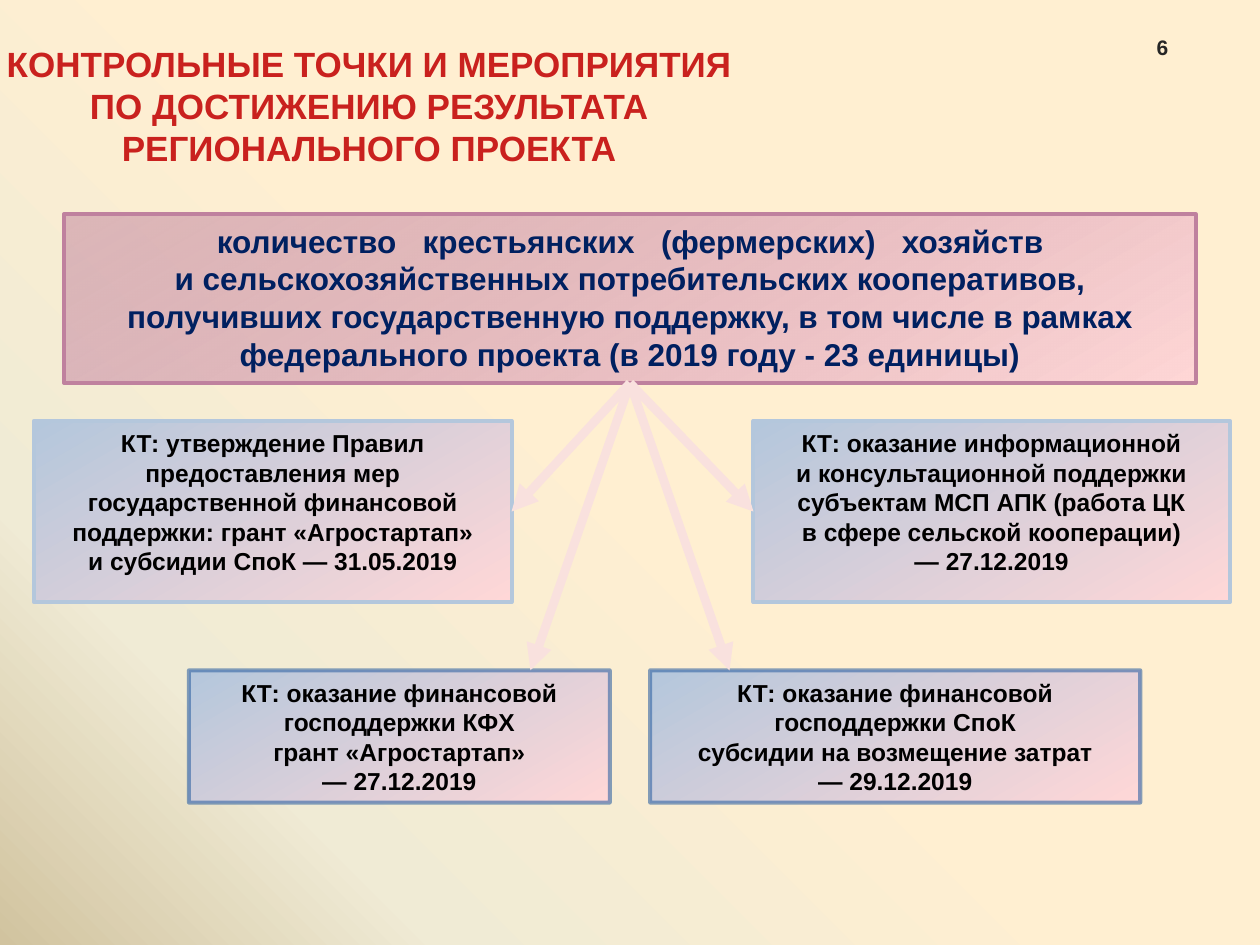
"""Build the slide on checkpoints and activities of the regional project."""
from copy import deepcopy

from lxml import etree
from pptx import Presentation
from pptx.dml.color import RGBColor
from pptx.enum.shapes import MSO_CONNECTOR, MSO_SHAPE
from pptx.enum.text import MSO_ANCHOR, PP_ALIGN
from pptx.oxml.ns import qn
from pptx.util import Inches, Pt

RECTANGLE, STRAIGHT = MSO_SHAPE.RECTANGLE, MSO_CONNECTOR.STRAIGHT
CENTER, TOP, BOTTOM = PP_ALIGN.CENTER, MSO_ANCHOR.TOP, MSO_ANCHOR.BOTTOM
BOTTOM_SIDE, LEFT_SIDE, RIGHT_SIDE = 2, 1, 3

COLORS = {
    "cream": "FFEFD1", "ivory": "F0EBD5", "sand": "D1C39F",
    "red": "C9211E", "navy": "002060", "black": "000000", "gray": "262626",
    "mauve": "BF819E", "rose": "FFD7D7", "sky": "B4C7DC", "steel": "3465A4",
    "arrow": "F9E1DE",
}

TITLE = ["КОНТРОЛЬНЫЕ ТОЧКИ И МЕРОПРИЯТИЯ",
         "ПО ДОСТИЖЕНИЮ РЕЗУЛЬТАТА РЕГИОНАЛЬНОГО ПРОЕКТА"]
GOAL = ["количество крестьянских (фермерских) хозяйств\n"
        "и сельскохозяйственных потребительских кооперативов, получивших "
        "государственную поддержку, в том числе в рамках федерального проекта "
        "(в 2019 году - 23 единицы)"]
SIDE_ROW = {"top": 3.34, "height": 1.44, "line": "sky", "opacity": 100}
LOW_ROW = {"top": 5.32, "height": 1.05, "line": "steel", "opacity": 60}
CHECKPOINTS = [
    (SIDE_ROW, 0.27, 3.79, RIGHT_SIDE, None,
     ["КТ: утверждение Правил предоставления мер государственной финансовой "
      "поддержки: грант «Агростартап»\nи субсидии СпоК — 31.05.2019"]),
    (LOW_ROW, 1.5, 3.34, None, 4.21,
     ["КТ: оказание финансовой господдержки КФХ", "грант «Агростартап»",
      "— 27.12.2019"]),
    (LOW_ROW, 5.16, 3.89, None, 5.79,
     ["КТ: оказание финансовой господдержки СпоК",
      "субсидии на возмещение затрат\n— 29.12.2019"]),
    (SIDE_ROW, 5.98, 3.78, LEFT_SIDE, None,
     ["КТ: оказание информационной\nи консультационной поддержки",
      "субъектам МСП АПК (работа ЦК\nв сфере сельской кооперации)\n— 27.12.2019"]),
]


def rgb(name):
    return RGBColor.from_string(COLORS[name])


def set_opacity(color_element, percent):
    if percent < 100:
        etree.SubElement(color_element, qn("a:alpha"), val=str(percent * 1000))


def paint_gradient(fill, owner, stops, angle):
    """Fill with (position, color, opacity) stops; angle runs clockwise."""
    fill.gradient()
    fill.gradient_angle = 360 - angle
    stop_list = owner.find(".//" + qn("a:gsLst"))
    while len(stop_list) < len(stops):
        stop_list.append(deepcopy(stop_list[-1]))
    for stop, element, (position, color, opacity) in zip(
            fill.gradient_stops, stop_list, stops):
        stop.position = position / 100
        stop.color.rgb = rgb(color)
        set_opacity(element[0], opacity)


def write(box, texts, size, color, anchor=TOP, margins=(0.1, 0.05)):
    frame = box.text_frame
    horizontal, vertical = map(Inches, margins)
    layout = {"word_wrap": True, "vertical_anchor": anchor,
              "margin_left": horizontal, "margin_right": horizontal,
              "margin_top": vertical, "margin_bottom": vertical}
    for name, value in layout.items():
        setattr(frame, name, value)
    for index, text in enumerate(texts):
        para = frame.add_paragraph() if index else frame.paragraphs[0]
        para.alignment = CENTER
        para.text = text
        for span in para.runs:
            for name, value in {"name": "Arial", "size": Pt(size), "bold": True}.items():
                setattr(span.font, name, value)
            span.font.color.rgb = rgb(color)
        for line_break in para._p.findall(qn("a:br")):
            line_break.append(deepcopy(para.runs[0]._r.rPr))


def add_label(page, place, *text_format):
    write(page.shapes.add_textbox(*map(Inches, place)), *text_format)


def add_panel(page, place, stops, line, opacity, texts, size, color):
    box = page.shapes.add_shape(RECTANGLE, *map(Inches, place))
    box.shadow.inherit = False
    paint_gradient(box.fill, box._element, stops, 60)
    box.line.color.rgb = rgb(line)
    box.line.width = Pt(2.3)
    set_opacity(box.line._ln.find(".//" + qn("a:srgbClr")), opacity)
    write(box, texts, size, color, margins=(0.11, 0.06))
    return box


def widen_first_line(box, gap):
    """Spread the words of the first line by the given extra points."""
    first = box.text_frame.paragraphs[0].runs[0]
    words = first.text.split(" ")
    template, anchor = deepcopy(first._r), first._r
    first.text = words[0]
    for word in words[1:]:
        for text, spacing in ((" ", gap), (word, 0)):
            span = deepcopy(template)
            span.text = text
            span.rPr.set("spc", str(spacing * 100))
            anchor.addnext(span)
            anchor = span


def add_arrow(page, goal, target, side, end_x):
    start = (goal.left + goal.width // 2, goal.top + goal.height)
    end = (Inches(end_x or 0), target.top)
    arrow = page.shapes.add_connector(STRAIGHT, *start, *end)
    arrow.begin_connect(goal, BOTTOM_SIDE)
    if side is not None:
        arrow.end_connect(target, side)
    arrow.line.color.rgb = rgb("arrow")
    arrow.line.width = Pt(5)
    etree.SubElement(arrow.line._ln, qn("a:tailEnd"), type="triangle")
    etree.SubElement(arrow._element.spPr, qn("a:effectLst"))


def main():
    deck = Presentation()
    deck.slide_width, deck.slide_height = Inches(10), Inches(7.5)
    page = deck.slides.add_slide(deck.slide_layouts[6])
    paint_gradient(page.background.fill, page._element,
                   [(50, "cream", 100), (80, "ivory", 100), (100, "sand", 100)], 135)
    add_label(page, (8.95, 0.19, 0.55, 0.33), ["6"], 12, "gray", BOTTOM)
    add_label(page, (-0.12, 0.29, 6.1, 1.11), TITLE, 20, "red")
    goal = add_panel(page, (0.51, 1.7, 8.98, 1.34),
                     [(0, "mauve", 50), (100, "rose", 100)],
                     "mauve", 100, GOAL, 18, "navy")
    widen_first_line(goal, 10)
    targets = []
    for row, left, width, side, end_x, texts in CHECKPOINTS:
        box = add_panel(page, (left, row["top"], width, row["height"]),
                        [(0, "sky", 100), (100, "rose", 100)],
                        row["line"], row["opacity"], texts, 14, "black")
        targets.append((box, side, end_x))
    for target in targets:
        add_arrow(page, goal, *target)
    deck.save("out.pptx")


if __name__ == "__main__":
    main()
